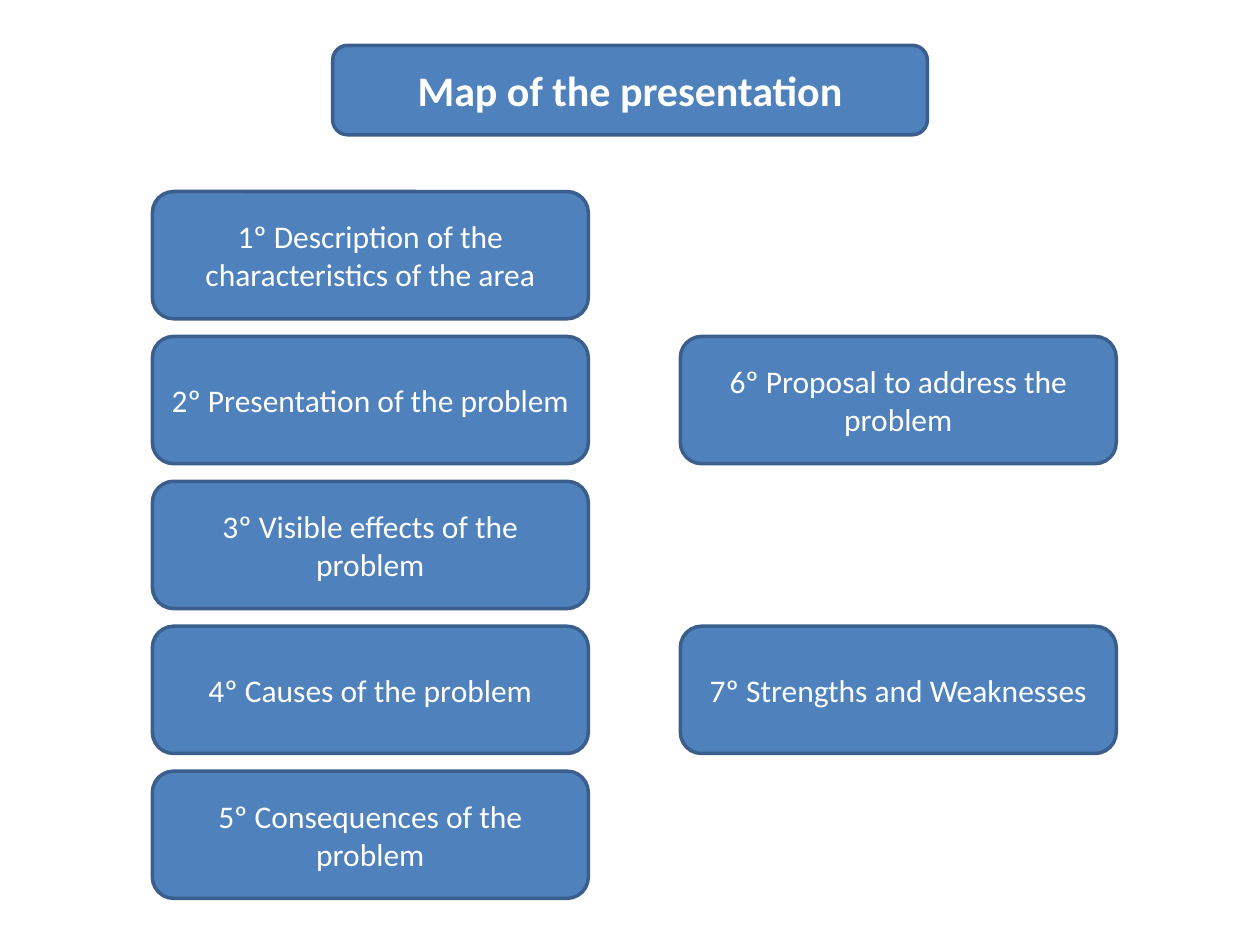
from dataclasses import dataclass

from pptx import Presentation
from pptx.dml.color import RGBColor
from pptx.enum.shapes import MSO_SHAPE
from pptx.enum.text import MSO_ANCHOR, PP_ALIGN
from pptx.util import Inches, Pt


@dataclass(frozen=True)
class Theme:
    font: str = "Calibri"
    fill: RGBColor = RGBColor(0x4F, 0x81, 0xBD)
    outline: RGBColor = RGBColor(0x3A, 0x5F, 0x8C)
    text: RGBColor = RGBColor(0xFF, 0xFF, 0xFF)
    outline_width: Pt = Pt(2)
    title_size: Pt = Pt(24)
    step_size: Pt = Pt(18)


THEME = Theme()

SLIDE_WIDTH, SLIDE_HEIGHT = 10, 7.5
TITLE_TOP, TITLE_WIDTH, TITLE_HEIGHT = 0.36, 4.72, 0.71
GRID_LEFT, GRID_TOP = 1.21, 1.52
STEP_WIDTH, STEP_HEIGHT = 3.46, 1.01
COLUMN_PITCH, ROW_PITCH = 4.19, 1.15

# (column, row, text)
STEPS = [
    (0, 0, "1º Description of the characteristics of the area"),
    (0, 1, "2º Presentation of the problem"),
    (0, 2, "3º Visible effects of the problem"),
    (0, 3, "4º Causes of the problem"),
    (0, 4, "5º Consequences of the problem"),
    (1, 1, "6º Proposal to address the problem"),
    (1, 3, "7º Strengths and Weaknesses"),
]


def add_box(slide, left, top, width, height, text, size, bold=False):
    """Add a rounded box with centred text; lengths are in inches."""
    shape = slide.shapes.add_shape(
        MSO_SHAPE.ROUNDED_RECTANGLE,
        Inches(left), Inches(top), Inches(width), Inches(height))
    shape.shadow.inherit = False
    shape.fill.solid()
    shape.fill.fore_color.rgb = THEME.fill
    shape.line.color.rgb = THEME.outline
    shape.line.width = THEME.outline_width

    text_frame = shape.text_frame
    text_frame.word_wrap = True
    text_frame.vertical_anchor = MSO_ANCHOR.MIDDLE
    paragraph = text_frame.paragraphs[0]
    paragraph.text = text
    paragraph.alignment = PP_ALIGN.CENTER
    paragraph.font.name = THEME.font
    paragraph.font.size = size
    paragraph.font.bold = bold
    paragraph.font.color.rgb = THEME.text


def add_title(slide, text):
    add_box(slide, (SLIDE_WIDTH - TITLE_WIDTH) / 2, TITLE_TOP,
            TITLE_WIDTH, TITLE_HEIGHT, text, THEME.title_size, bold=True)


def add_step(slide, column, row, text):
    add_box(slide, GRID_LEFT + column * COLUMN_PITCH, GRID_TOP + row * ROW_PITCH,
            STEP_WIDTH, STEP_HEIGHT, text, THEME.step_size)


def main():
    presentation = Presentation()
    presentation.slide_width = Inches(SLIDE_WIDTH)
    presentation.slide_height = Inches(SLIDE_HEIGHT)
    slide = presentation.slides.add_slide(presentation.slide_layouts[6])

    for column, row, text in STEPS:
        add_step(slide, column, row, text)
    add_title(slide, "Map of the presentation")

    presentation.save("out.pptx")


if __name__ == "__main__":
    main()
